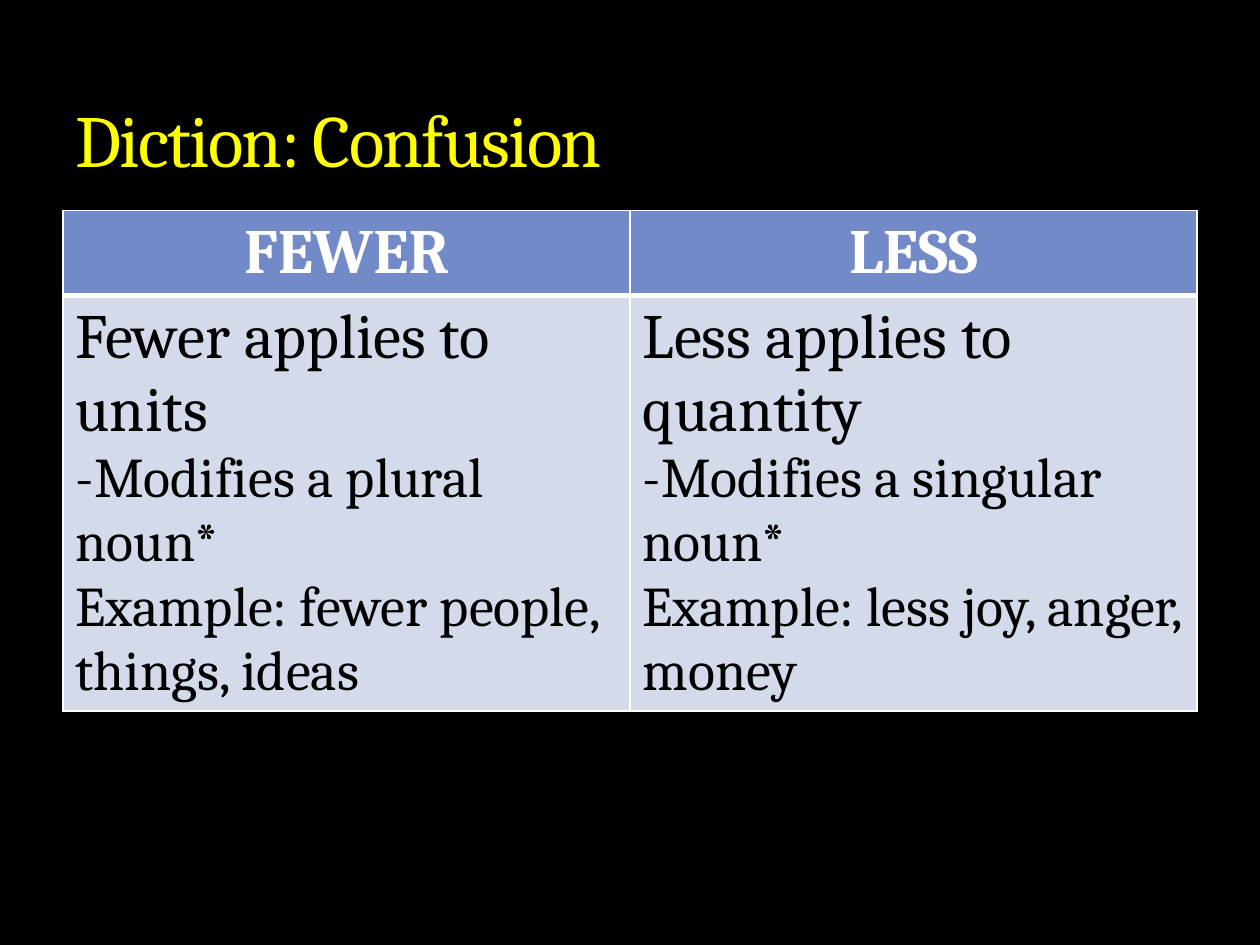
from dataclasses import dataclass

from lxml.etree import SubElement
from pptx import Presentation
from pptx.dml.color import RGBColor
from pptx.enum.text import MSO_ANCHOR, PP_ALIGN
from pptx.oxml.ns import qn
from pptx.slide import Slide
from pptx.table import _Cell
from pptx.text.text import _Paragraph
from pptx.util import Inches, Pt


@dataclass(frozen=True)
class Theme:
    font: str = "Cambria"
    background: str = "000000"
    title: str = "FFFF00"
    header_text: str = "FFFFFF"
    body_text: str = "000000"
    header_fill: str = "738AC8"
    body_fill: str = "D5DAEB"
    border: str = "FFFFFF"
    title_size: int = 42
    lead_size: int = 36
    detail_size: int = 32


@dataclass(frozen=True)
class WordUse:
    word: str
    rule: str
    details: tuple[str, ...]


THEME = Theme()
WORD_USES = (
    WordUse("FEWER", "Fewer applies to units",
            ("-Modifies a plural noun*", "Example: fewer people, things, ideas")),
    WordUse("LESS", "Less applies to quantity",
            ("-Modifies a singular noun*", "Example: less joy, anger, money")),
)


def write(paragraph: _Paragraph, text: str, color: str, size: int,
          bold: bool = False, align: PP_ALIGN = PP_ALIGN.LEFT) -> None:
    paragraph.alignment = align
    run = paragraph.add_run()
    run.text = text
    font_format = {"name": THEME.font, "size": Pt(size), "bold": bold}
    for name, value in font_format.items():
        setattr(run.font, name, value)
    run.font.color.rgb = RGBColor.from_string(color)


def style_cell(cell: _Cell, fill: str, bottom_width: float) -> None:
    # Borders come before the fill in the cell properties
    properties = cell._tc.get_or_add_tcPr()
    widths = {"a:lnL": 1, "a:lnR": 1, "a:lnT": 1, "a:lnB": bottom_width}
    for tag, width in widths.items():
        line = SubElement(properties, qn(tag), w=str(Pt(width)))
        solid = SubElement(line, qn("a:solidFill"))
        SubElement(solid, qn("a:srgbClr"), val=THEME.border)
    cell.fill.solid()
    cell.fill.fore_color.rgb = RGBColor.from_string(fill)


def add_title(slide: Slide, text: str) -> None:
    title = slide.shapes.title
    box = {"left": 0.5, "top": 0.17, "width": 9, "height": 1.33}
    for name, value in box.items():
        setattr(title, name, Inches(value))
    title.text_frame.vertical_anchor = MSO_ANCHOR.BOTTOM
    paragraph = title.text_frame.paragraphs[0]
    write(paragraph, text, THEME.title, THEME.title_size)
    # Tighten the letters by one point
    paragraph.runs[0].font._element.set("spc", "-100")


def add_word_table(slide: Slide, uses: tuple[WordUse, ...]) -> None:
    frame = slide.shapes.add_table(2, len(uses), Inches(0.5), Inches(1.67),
                                   Inches(9), Inches(4.13))
    table = frame.table
    for row in table.rows:
        row.height = Inches(0.41)  # rows grow to fit their text
    frame.height = Inches(4.13)

    for column, use in enumerate(uses):
        header, body = table.cell(0, column), table.cell(1, column)
        style_cell(header, THEME.header_fill, 3)
        write(header.text_frame.paragraphs[0], use.word, THEME.header_text,
              THEME.lead_size, bold=True, align=PP_ALIGN.CENTER)

        style_cell(body, THEME.body_fill, 1)
        write(body.text_frame.paragraphs[0], use.rule, THEME.body_text, THEME.lead_size)
        for detail in use.details:
            write(body.text_frame.add_paragraph(), detail,
                  THEME.body_text, THEME.detail_size)


def main() -> None:
    presentation = Presentation()
    presentation.slide_width = Inches(10)
    presentation.slide_height = Inches(7.5)
    slide = presentation.slides.add_slide(presentation.slide_layouts[5])
    slide.background.fill.solid()
    slide.background.fill.fore_color.rgb = RGBColor.from_string(THEME.background)

    add_title(slide, "Diction: Confusion")
    add_word_table(slide, WORD_USES)
    presentation.save("out.pptx")


if __name__ == "__main__":
    main()
